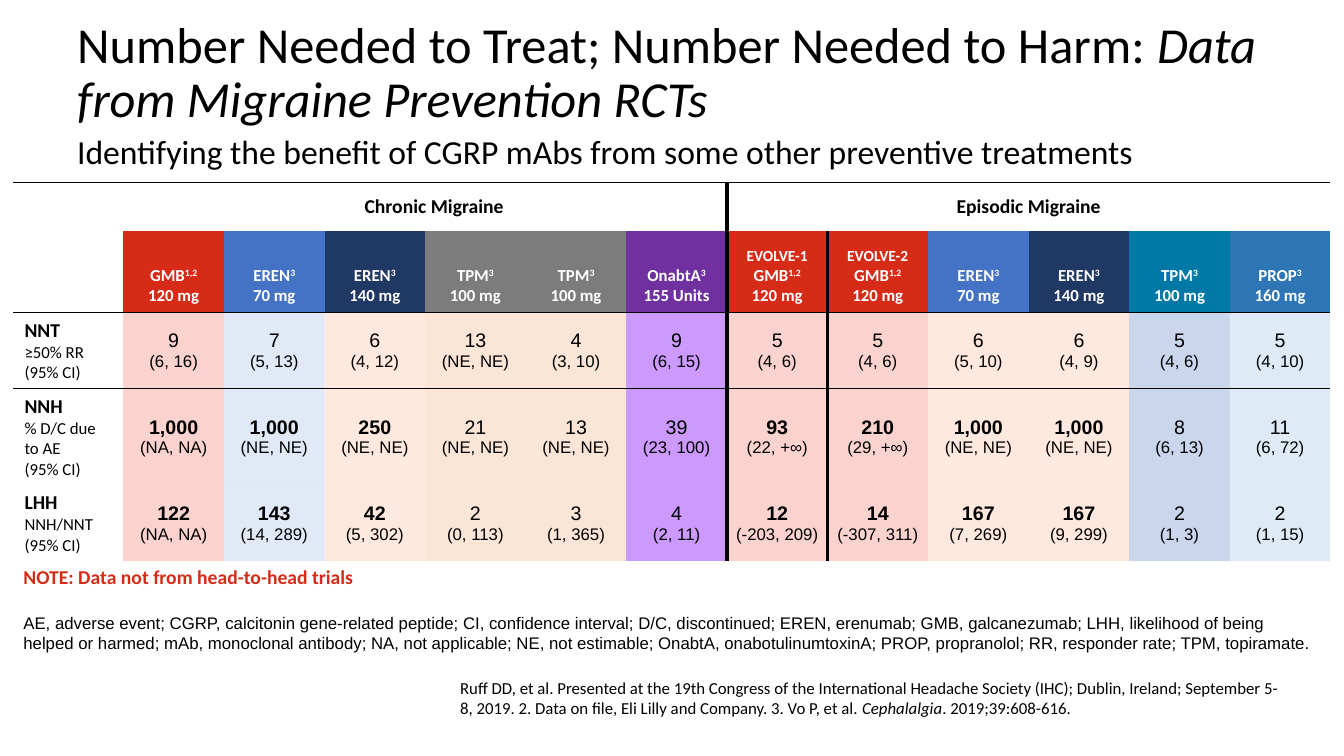
from lxml import etree
from pptx import Presentation
from pptx import util as u
from pptx.dml import color
from pptx.enum import text
from pptx.oxml import ns

COLORS = {
    "black": "000000", "white": "FFFFFF", "red": "D52B17", "pink": "FAD2CE",
    "blue": "4472C4", "sky": "8FAADC", "navy": "203864", "peach": "FFE9DE",
    "gray": "7C7C7C", "sand": "FBE5D6", "purple": "7030A0", "lilac": "CC99FF",
    "teal": "0079A6", "mist": "C9D6EC", "steel": "2E75B6", "ice": "DEEBF7",
}
NO_GRID = "{2D5ABB26-0587-4C30-8999-92F81FD0307C}"
CENTER = text.PP_ALIGN.CENTER
MIDDLE, BOTTOM = text.MSO_ANCHOR.MIDDLE, text.MSO_ANCHOR.BOTTOM

# trial, drug, references, dose, header fill, body fill, values of NNT, NNH and LHH
ARMS = [
    ("", "GMB", "1,2", "120 mg", "red", "pink", ["9 (6, 16)", "1,000 (NA, NA)", "122 (NA, NA)"]),
    ("", "EREN", "3", "70 mg", "blue", "sky", ["7 (5, 13)", "1,000 (NE, NE)", "143 (14, 289)"]),
    ("", "EREN", "3", "140 mg", "navy", "peach", ["6 (4, 12)", "250 (NE, NE)", "42 (5, 302)"]),
    ("", "TPM", "3", "100 mg", "gray", "sand", ["13 (NE, NE)", "21 (NE, NE)", "2 (0, 113)"]),
    ("", "TPM", "3", "100 mg", "gray", "sand", ["4 (3, 10)", "13 (NE, NE)", "3 (1, 365)"]),
    ("", "OnabtA", "3", "155 Units", "purple", "lilac", ["9 (6, 15)", "39 (23, 100)", "4 (2, 11)"]),
    ("EVOLVE-1", "GMB", "1,2", "120 mg", "red", "pink",
     ["5 (4, 6)", "93 (22, +∞)", "12 (-203, 209)"]),
    ("EVOLVE-2", "GMB", "1,2", "120 mg", "red", "pink",
     ["5 (4, 6)", "210 (29, +∞)", "14 (-307, 311)"]),
    ("", "EREN", "3", "70 mg", "blue", "peach", ["6 (5, 10)", "1,000 (NE, NE)", "167 (7, 269)"]),
    ("", "EREN", "3", "140 mg", "navy", "peach", ["6 (4, 9)", "1,000 (NE, NE)", "167 (9, 299)"]),
    ("", "TPM", "3", "100 mg", "teal", "mist", ["5 (4, 6)", "8 (6, 13)", "2 (1, 3)"]),
    ("", "PROP", "3", "160 mg", "steel", "ice", ["5 (4, 10)", "11 (6, 72)", "2 (1, 15)"]),
]
MEASURES = [
    ["NNT", "≥50% RR (95% CI)"],
    ["NNH", "% D/C due to AE", "(95% CI)"],
    ["LHH", "NNH/NNT", "(95% CI)"],
]
MAB_DRUGS = ("GMB", "EREN")
HALF = len(ARMS) // 2


class Deck:
    def __init__(self):
        self.prs = Presentation()
        self.prs.slide_width, self.prs.slide_height = u.Inches(13.33), u.Inches(7.5)
        self.s = self.prs.slides.add_slide(self.prs.slide_layouts[6])

    def x(self, share):
        return round(self.prs.slide_width * share / 100)

    def y(self, share):
        return round(self.prs.slide_height * share / 100)

    def fill_frame(self, tf, paragraphs, base, **layout):
        """Fill a text frame; each paragraph is a list of (text, format changes)."""
        for i, runs in enumerate(paragraphs):
            p = tf.paragraphs[0] if i == 0 else tf.add_paragraph()
            for name, value in layout.items():
                setattr(p, name, value)
            for words, changes in runs:
                r = p.add_run()
                r.text = words
                style = {"name": "Calibri", "size": 12, "color": "black", **base, **changes}
                r.font.color.rgb = color.RGBColor.from_string(COLORS[style.pop("color")])
                r.font.size = u.Pt(style.pop("size"))
                if style.pop("sup", False):
                    r.font._element.set("baseline", "30000")
                for name, value in style.items():
                    setattr(r.font, name, value)

    def text(self, place, runs, base, anchor=text.MSO_ANCHOR.TOP, **layout):
        left, top, width, height = place
        sp = self.s.shapes.add_textbox(self.x(left), self.y(top), self.x(width), self.y(height))
        sp.text_frame.word_wrap = True
        sp.text_frame.vertical_anchor = anchor
        self.fill_frame(sp.text_frame, [runs], base, **layout)

    def table(self, left, top, columns, rows):
        frame = self.s.shapes.add_table(len(rows), len(columns), self.x(left), self.y(top),
                                        self.x(sum(columns)), self.y(sum(rows)))
        tbl = frame.table
        for column, share in zip(tbl.columns, columns):
            column.width = self.x(share)
        for row, share in zip(tbl.rows, rows):
            row.height = self.y(share)
        tbl._tbl.tblPr.find(ns.qn("a:tableStyleId")).text = NO_GRID
        tbl.first_row = tbl.horz_banding = False
        return tbl

    def borders(self, cell, **widths):
        """Draw black cell edges, given in the order L, R, T, B in points."""
        for edge, width in widths.items():
            ln = etree.SubElement(cell._tc.get_or_add_tcPr(), ns.qn("a:ln" + edge),
                                  w=str(u.Pt(width)))
            solid = etree.SubElement(ln, ns.qn("a:solidFill"))
            etree.SubElement(solid, ns.qn("a:srgbClr"), val=COLORS["black"])

    def cell(self, cell, paragraphs, base, fill=None, anchor=MIDDLE,
             margins=(0.11, 0.06), **layout):
        cell.vertical_anchor = anchor
        cell.margin_left = cell.margin_right = u.Inches(margins[0])
        cell.margin_top = cell.margin_bottom = u.Inches(margins[1])
        self.fill_frame(cell.text_frame, paragraphs, base, **layout)
        if fill:
            cell.fill.solid()
            cell.fill.fore_color.rgb = color.RGBColor.from_string(COLORS[fill])
        if fill == "sky":
            rgb = cell._tc.tcPr.find(ns.qn("a:solidFill")).find(ns.qn("a:srgbClr"))
            etree.SubElement(rgb, ns.qn("a:alpha"), val="25000")


def rule_table(deck, tbl):
    for row in range(len(tbl.rows)):
        for col in range(len(tbl.columns)):
            edges = {}
            if col == HALF + 1:
                edges["L"] = 3
            if col == HALF or (row, col) == (0, 1):
                edges["R"] = 3
            if row in (0, 2):
                edges["T"] = 1
            if row == 1:
                edges["B"] = 1
            deck.borders(tbl.cell(row, col), **edges)


def fill_table(deck, tbl):
    heading = {"size": 14, "bold": True}
    for col, name in ((1, "Chronic Migraine"), (HALF + 1, "Episodic Migraine")):
        tbl.cell(0, col).merge(tbl.cell(0, col + HALF - 1))
        deck.cell(tbl.cell(0, col), [[(name, heading)]], {}, alignment=CENTER)
    tbl.cell(0, 1).margin_left = u.Inches(0.29)

    for row, (name, *details) in enumerate(MEASURES, 2):
        label = [[(name, heading)]] + [[(line, {})] for line in details]
        deck.cell(tbl.cell(row, 0), label, {})

    for col, (trial, drug, refs, dose, head, body, values) in enumerate(ARMS, 1):
        title = [[(trial, {"size": 11})]] if trial else []
        title += [[(drug, {}), (refs, {"sup": True})], [(dose, {})]]
        deck.cell(tbl.cell(1, col), title, {"color": "white", "bold": True}, head, BOTTOM,
                  alignment=CENTER)
        for row, value in enumerate(values, 2):
            number, interval = value.split(" ", 1)
            bold = row > 2 and drug in MAB_DRUGS
            deck.cell(tbl.cell(row, col), [[(number, {"size": 14, "bold": bold})], [(interval, {})]],
                      {"name": "Arial"}, body, margins=(0, 0.15), alignment=CENTER)


def main():
    deck = Deck()
    deck.text((5, 1.47, 95, 16.67),
              [("Number Needed to Treat; Number Needed to Harm: ", {}),
               ("Data from Migraine Prevention RCTs", {"italic": True})],
              {"size": 36}, MIDDLE, line_spacing=0.9)
    deck.text((5, 17.2, 90, 5.6),
              [("Identifying the benefit of CGRP mAbs from some other preventive treatments", {})],
              {"size": 24}, line_spacing=0.9, space_after=u.Pt(6))

    label_width = 8.18
    arm_width = (98 - label_width) / len(ARMS)
    tbl = deck.table(1, 24.13, [label_width] + [arm_width] * len(ARMS), [6.4, 10.8, 10, 12.8, 10])
    rule_table(deck, tbl)
    fill_table(deck, tbl)

    deck.text((1, 76.4, 98, 10.67),
              [("AE, adverse event; CGRP, calcitonin gene-related peptide; CI, confidence interval; "
                "D/C, discontinued; EREN, erenumab; GMB, galcanezumab; LHH, likelihood of being "
                "helped or harmed; mAb, monoclonal antibody; NA, not applicable; NE, not estimable; "
                "OnabtA, onabotulinumtoxinA; PROP, propranolol; RR, responder rate; "
                "TPM, topiramate.", {})], {"name": "Arial"}, BOTTOM)
    deck.text((1, 74.13, 88.9, 4.53), [("NOTE: Data not from head-to-head trials", {})],
              {"size": 14, "bold": True, "color": "red"})
    deck.text((33.5, 88.93, 63.1, 6.67),
              [("Ruff DD, et al. Presented at the 19th Congress of the International Headache "
                "Society (IHC); Dublin, Ireland; September 5-8, 2019. 2. Data on file, Eli Lilly "
                "and Company. 3. Vo P, et al. ", {}),
               ("Cephalalgia", {"italic": True}), (". 2019;39:608-616.", {})], {})
    deck.prs.save("out.pptx")


if __name__ == "__main__":
    main()
